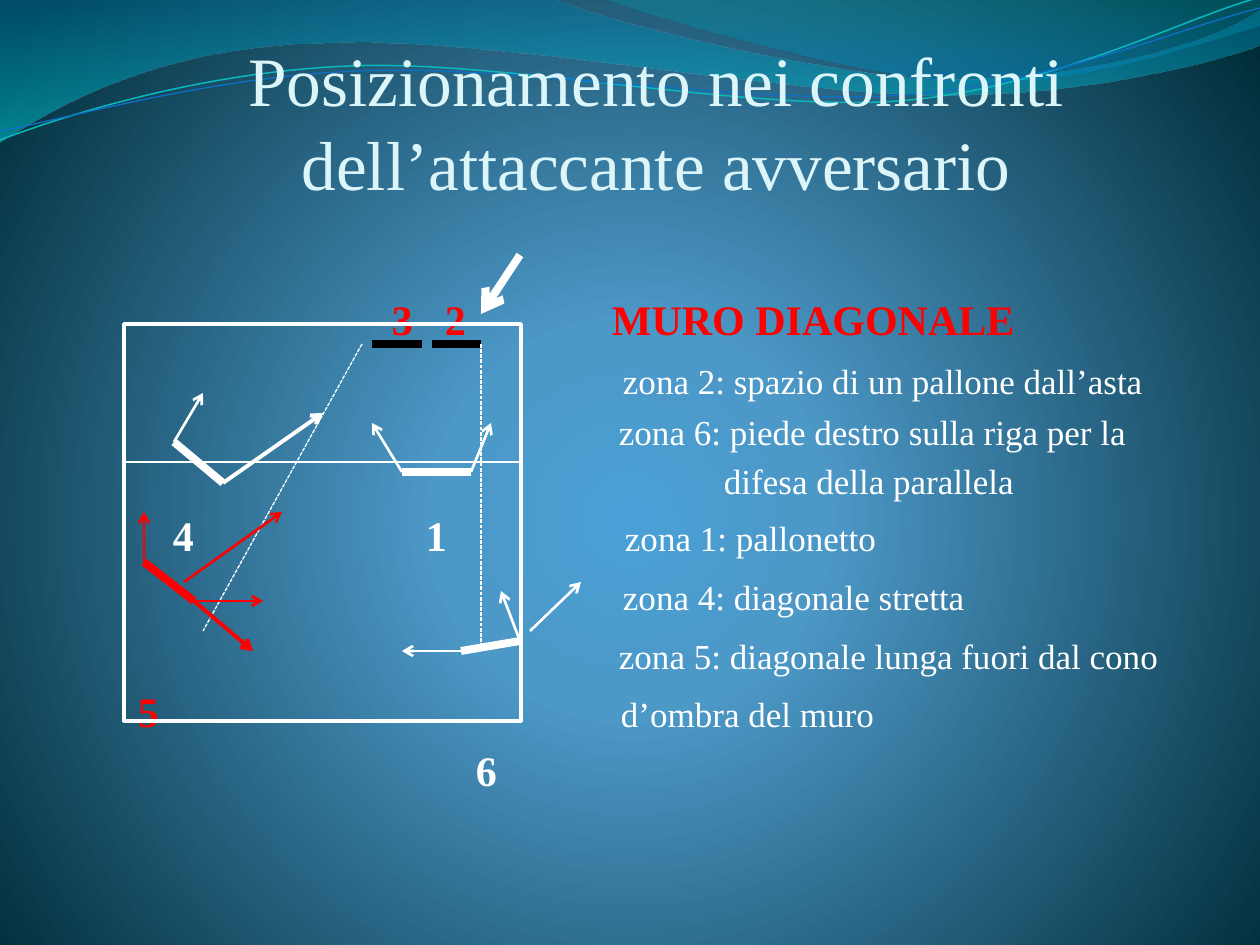
"""Build the volleyball slide on positioning against the opposing attacker."""
from lxml.etree import SubElement
from pptx import Presentation
from pptx.dml.color import RGBColor
from pptx.enum.dml import MSO_LINE
from pptx.enum.shapes import MSO_CONNECTOR, MSO_SHAPE
from pptx.enum.text import MSO_ANCHOR, MSO_AUTO_SIZE, PP_ALIGN
from pptx.oxml.ns import qn
from pptx.util import Pt

SCALE = 9144000 / 1260
FONT = "Times New Roman"
WHITE, RED, BLACK, PALE = "FFFFFF", "FF0000", "000000", "DBF5F9"
NOTES_LEFT = 64

BACKDROP = [(0, "4AA0D6", 100), (25, "4C98C7", 100), (100, "002C38", 100)]
WAVES = [
    ([[(0, 0)], [(554, -1)],
      [(600, 21), (837, 79), (955, 79)], [(1075, 79), (1207, 47), (1260, 11)],
      [(1261, 45)],
      [(1239, 55), (1096, 96), (940, 95)], [(784, 95), (481, 35), (324, 43)],
      [(163, 45), (58, 105), (-1, 142)]],
     [(0, "0074A1", 45), (100, "00C6CF", 55)]),
    ([[(604, -1)],
      [(641, 14), (859, 78), (969, 82)], [(1079, 87), (1211, 40), (1260, 26)],
      [(1260, 0)]],
     [(0, "00A1A9", 30), (80, "008BBF", 45)]),
]
RIPPLES = [
    ([[(0, 140)], [(60, 117), (199, 72), (349, 66)],
      [(498, 59), (747, 112), (898, 101)], [(1050, 89), (1182, 19), (1257, -2)]],
     "0AB8BF", 0.85),
    ([[(0, 131)], [(59, 121), (207, 77), (357, 71)],
      [(508, 64), (752, 106), (903, 95)], [(1053, 84), (1186, 26), (1260, 8)]],
     "0F6FC6", 0.75),
]
PLAYER_RED = dict(size=24, color=RED, bold=True)
PLAYER_WHITE = dict(size=24, color=WHITE, bold=True)
ZONE = dict(size=20, color=WHITE)
NOTES = [
    (24, [(392, "3", PLAYER_RED), (445, "2", PLAYER_RED),
          (612, "MURO DIAGONALE", PLAYER_RED)]),
    (24, [(623, "zona 2: spazio di un pallone dall’asta", ZONE)]),
    (20, [(619, "zona 6: piede destro sulla riga per la", ZONE)]),
    (20, [(724, "difesa della parallela", ZONE)]),
    (24, [(173, "4", PLAYER_WHITE), (426, "1", PLAYER_WHITE),
          (625, "zona 1: pallonetto", ZONE)]),
    (24, [(623, "zona 4: diagonale stretta", ZONE)]),
    (24, [(619, "zona 5: diagonale lunga fuori dal cono", ZONE)]),
    (24, [(138, "5", PLAYER_RED), (621, "d’ombra del muro", ZONE)]),
    (24, [(476, "6", PLAYER_WHITE)]),
]
MARKINGS = [
    (dict(color=WHITE, width=1.5), [(124, 462, 520, 462)]),
    (dict(color=BLACK, width=4.5), [(432, 344, 481, 344), (372, 344, 422, 344)]),
    (dict(color=WHITE, width=4.5),
     [(174, 442, 223, 483), (402, 472, 471, 472), (461, 651, 520, 641)]),
    (dict(color=RED, width=4.5), [(144, 562, 194, 601)]),
    (dict(color=WHITE, width=0.75, dashed=True),
     [(481, 344, 481, 651), (362, 344, 203, 631)]),
    (dict(color=WHITE, width=1.5, arrow=True),
     [(174, 442, 203, 393), (461, 651, 402, 651), (520, 641, 501, 591),
      (402, 472, 372, 423), (471, 472, 491, 423), (530, 631, 581, 582)]),
    (dict(color=RED, width=1.5, arrow=True),
     [(144, 562, 144, 512), (194, 601, 263, 601), (184, 582, 282, 512)]),
    (dict(color=RED, width=2.25, arrow=True), [(194, 601, 253, 651)]),
    (dict(color=WHITE, width=2.25, arrow=True), [(223, 483, 323, 413)]),
    (dict(color=WHITE, width=4.5, arrow=True), [(520, 255, 481, 314)]),
]


def px(value):
    """Turn pixels into EMU."""
    return round(value * SCALE)


def rgb(code):
    """Turn a hex string into a colour."""
    return RGBColor.from_string(code)


def set_gradient(fill, owner, stops, radial=False):
    """Give a fill its gradient stops and direction."""
    fill.gradient()
    gradient = owner.find(".//" + qn("a:gradFill"))
    for child in list(gradient):
        gradient.remove(child)
    stop_list = SubElement(gradient, qn("a:gsLst"))
    for position, code, opacity in stops:
        stop = SubElement(stop_list, qn("a:gs"), pos=str(position * 1000))
        color = SubElement(stop, qn("a:srgbClr"), val=code)
        if opacity < 100:
            SubElement(color, qn("a:alpha"), val=str(opacity * 1000))
    if radial:
        circle = SubElement(gradient, qn("a:path"), path="circle")
        SubElement(circle, qn("a:fillToRect"), l="10000", t="110000", r="10000", b="100000")
    else:
        SubElement(gradient, qn("a:lin"), ang="5400000", scaled="0")


def add_outline(shapes, steps, closed):
    """Add a freeform whose one-point steps are lines and three-point steps curves."""
    points = [point for step in steps for point in step]
    builder = shapes.build_freeform(*points[0], scale=SCALE)
    builder.add_line_segments(points[1:], close=closed)
    outline = builder.convert_to_shape()
    outline.shadow.inherit = False
    segments = iter(outline._element.findall(".//" + qn("a:lnTo")))
    for step in steps[1:]:
        group = [next(segments) for _ in step]
        if len(group) == 3:
            curve = group[0].makeelement(qn("a:cubicBezTo"))
            group[0].addprevious(curve)
            for segment in group:
                curve.append(segment[0])
                segment.getparent().remove(segment)
    return outline


def add_wave(shapes, steps, stops):
    """Add a translucent wave band."""
    wave = add_outline(shapes, steps, True)
    set_gradient(wave.fill, wave._element.spPr, stops)
    wave.line.fill.background()


def add_ripple(shapes, steps, color, width):
    """Add a thin wavy line."""
    ripple = add_outline(shapes, steps, False)
    ripple.fill.background()
    ripple.line.color.rgb = rgb(color)
    ripple.line.width = Pt(width)


def set_frame(frame, **values):
    """Clear the margins of a text frame and set its format."""
    defaults = dict(margin_left=0, margin_top=0, margin_right=0, margin_bottom=0,
                    word_wrap=True, auto_size=MSO_AUTO_SIZE.NONE)
    for name, value in (defaults | values).items():
        setattr(frame, name, value)


def write(paragraph, text, size, color, bold=False):
    """Add a formatted run to a paragraph."""
    run = paragraph.add_run()
    run.text = text
    for name, value in dict(name=FONT, size=Pt(size), bold=bold).items():
        setattr(run.font, name, value)
    run.font.color.rgb = rgb(color)


def add_title(slide, text):
    """Fill the title placeholder."""
    title = slide.shapes.title
    slide.shapes._spTree.append(title._element)
    for name, value in dict(left=114, top=94, width=1085, height=110).items():
        setattr(title, name, px(value))
    set_frame(title.text_frame, margin_top=px(6), vertical_anchor=MSO_ANCHOR.BOTTOM)
    heading = title.text_frame.paragraphs[0]
    heading.alignment = PP_ALIGN.CENTER
    write(heading, text, 39.6, PALE)


def add_notes(slide, rows):
    """Add the player numbers and zone notes, lined up on tab stops."""
    frame = slide.shapes.add_textbox(*map(px, (NOTES_LEFT, 267, 1134, 605))).text_frame
    set_frame(frame, margin_top=px(27))
    for index, (tab_size, cells) in enumerate(rows):
        row = frame.add_paragraph() if index else frame.paragraphs[0]
        properties = row._p.get_or_add_pPr()
        if index:
            spacing = SubElement(properties, qn("a:spcBef"))
            SubElement(spacing, qn("a:spcPct"), val="20000")
        tabs = SubElement(properties, qn("a:tabLst"))
        for left, text, style in cells:
            SubElement(tabs, qn("a:tab"), pos=str(px(left - NOTES_LEFT)), algn="l")
            write(row, "\t", tab_size, WHITE)
            write(row, text, **style)


def add_marking(slide, ends, color, width, dashed=False, arrow=False):
    """Add a straight court marking or movement arrow."""
    marking = slide.shapes.add_connector(MSO_CONNECTOR.STRAIGHT, *map(px, ends))
    marking.line.color.rgb = rgb(color)
    marking.line.width = Pt(width)
    if dashed:
        marking.line.dash_style = MSO_LINE.SQUARE_DOT
    if arrow:
        SubElement(marking.line._get_or_add_ln(), qn("a:tailEnd"), type="arrow")
    SubElement(marking._element.spPr, qn("a:effectLst"))


def add_court(slide):
    """Add the court border."""
    court = slide.shapes.add_shape(MSO_SHAPE.RECTANGLE, *map(px, (124, 324, 397, 397)))
    court.shadow.inherit = False
    court.fill.background()
    court.line.color.rgb = rgb(WHITE)
    court.line.width = Pt(2)


def main():
    """Build and save the slide."""
    deck = Presentation()
    deck.slide_width, deck.slide_height = px(1260), px(945)
    slide = deck.slides.add_slide(deck.slide_layouts[5])
    set_gradient(slide.background.fill, slide._element, BACKDROP, radial=True)
    for wave in WAVES:
        add_wave(slide.shapes, *wave)
    ripples = slide.shapes.add_group_shape()
    for ripple in RIPPLES:
        add_ripple(ripples.shapes, *ripple)
    add_title(slide, "Posizionamento nei confronti dell’attaccante avversario")
    add_notes(slide, NOTES)
    for style, markings in MARKINGS:
        for ends in markings:
            add_marking(slide, ends, **style)
    add_court(slide)
    deck.save("out.pptx")


if __name__ == "__main__":
    main()
